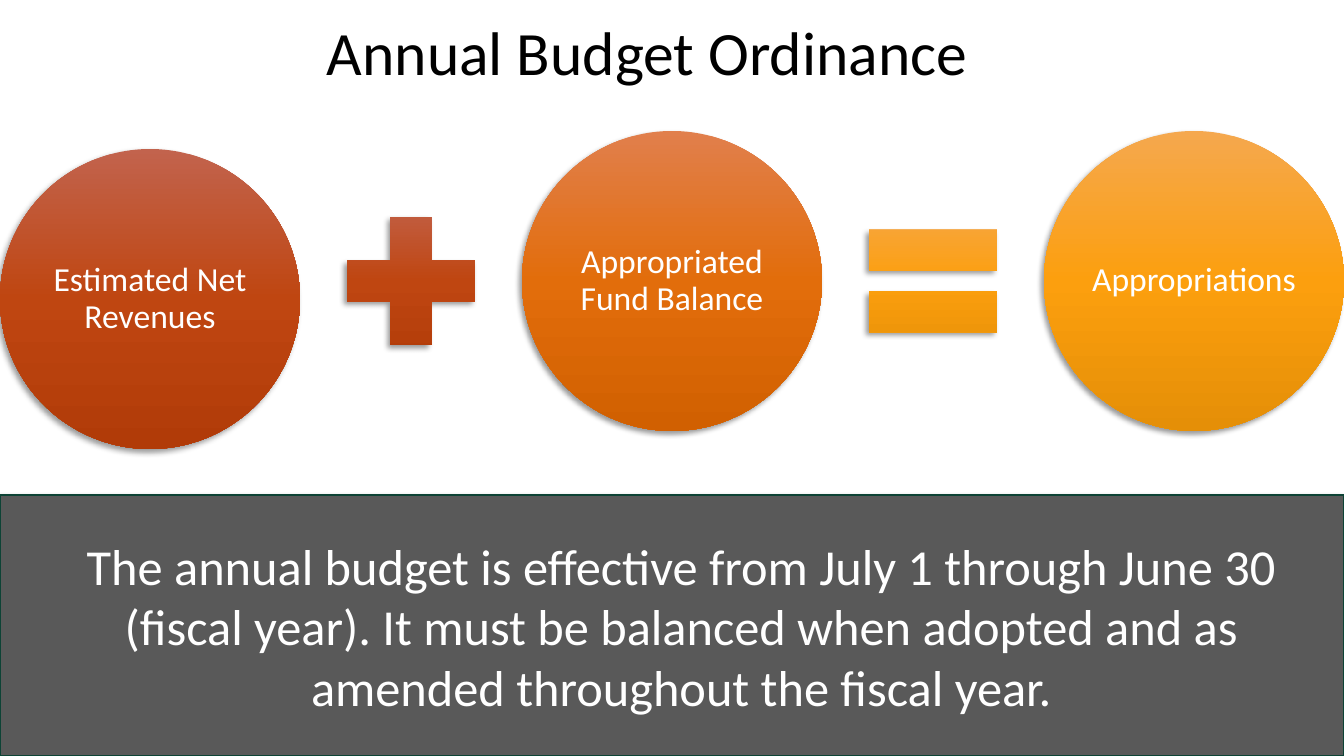
from copy import deepcopy
from dataclasses import dataclass

from pptx import Presentation
from pptx.dml.color import RGBColor
from pptx.enum.shapes import MSO_SHAPE
from pptx.enum.text import MSO_ANCHOR, PP_ALIGN
from pptx.oxml import parse_xml
from pptx.oxml.ns import nsdecls
from pptx.util import Emu, Pt


@dataclass(frozen=True)
class Theme:
    font: str = "Calibri"
    black: str = "000000"
    white: str = "FFFFFF"
    grey: str = "595959"
    green: str = "0D4335"
    rust: tuple = ("C2634D", "BF4611", "B13B08")
    orange: tuple = ("E17F4C", "E26D0B", "D16001")
    amber: tuple = ("F5A84E", "FC9F0E", "E58F07")
    head: int = 44
    body: int = 36
    label: int = 24


def px(n):
    return Emu(round(n * 914400 / 100.8))


def rgb(code):
    return RGBColor.from_string(code)


def write(shape, text, *, font, size, color, inset=None, space=None, indent=0):
    frame = shape.text_frame
    frame.word_wrap = True
    frame.vertical_anchor = MSO_ANCHOR.MIDDLE
    if inset is not None:
        frame.margin_left = frame.margin_right = px(inset)
        frame.margin_top = frame.margin_bottom = px(inset)
    para = frame.paragraphs[0]
    para.alignment = PP_ALIGN.CENTER
    para.line_spacing = space
    if indent:
        props = para._p.get_or_add_pPr()
        props.set("marL", str(px(indent)))
        props.set("indent", "0")
    run = para.add_run()
    run.text = text
    run.font.name = font
    run.font.size = Pt(size)
    run.font.color.rgb = rgb(color)


class Board:
    def __init__(self, slide, theme):
        self.slide = slide
        self.theme = theme

    def title(self, text, *box):
        shape = self.slide.shapes.add_textbox(*map(px, box))
        write(shape, text, font=self.theme.font, size=self.theme.head,
              color=self.theme.black, space=0.9)

    def shape(self, kind, *box):
        shape = self.slide.shapes.add_shape(kind, *map(px, box))
        shape.shadow.inherit = False
        shape.line.fill.background()
        shade = parse_xml(
            f'<a:outerShdw {nsdecls("a")} blurRad="{Pt(4)}" dist="{Pt(3)}" '
            'dir="8100000" rotWithShape="0"><a:srgbClr val="000000">'
            '<a:alpha val="40000"/></a:srgbClr></a:outerShdw>')
        shape.element.xpath("./p:spPr/a:effectLst")[0].append(shade)
        return shape

    def glow(self, kind, tones, *box):
        shape = self.shape(kind, *box)
        shape.fill.gradient()
        shape.fill.gradient_angle = 270
        first = shape.element.xpath("./p:spPr/a:gradFill/a:gsLst/a:gs")[0]
        first.addnext(deepcopy(first))
        for i, (stop, tone) in enumerate(zip(shape.fill.gradient_stops, tones)):
            stop.position = i / 2
            stop.color.rgb = rgb(tone)
        return shape

    def circle(self, text, tones, left, top):
        shape = self.glow(MSO_SHAPE.OVAL, tones, left, top, 300, 300)
        write(shape, text, font=self.theme.font, size=self.theme.label,
              color=self.theme.white, inset=3, space=0.9)

    def band(self, text, *box):
        shape = self.shape(MSO_SHAPE.RECTANGLE, *box)
        shape.fill.solid()
        shape.fill.fore_color.rgb = rgb(self.theme.grey)
        shape.line.color.rgb = rgb(self.theme.green)
        shape.line.width = Pt(1)
        write(shape, text, font=self.theme.font, size=self.theme.body,
              color=self.theme.white, indent=19)


def main():
    deck = Presentation()
    deck.slide_width, deck.slide_height = px(1344), px(756)
    theme = Theme()
    board = Board(deck.slides.add_slide(deck.slide_layouts[6]), theme)

    board.title("Annual Budget Ordinance", 93, -17, 1109, 146)

    step = 522
    terms = [
        ("Estimated Net Revenues", theme.rust, 149),
        ("Appropriated Fund Balance", theme.orange, 131),
        ("Appropriations", theme.amber, 131),
    ]
    for i, (text, tones, top) in enumerate(terms):
        board.circle(text, tones, i * step, top)

    signs = [(MSO_SHAPE.MATH_PLUS, theme.rust), (MSO_SHAPE.MATH_EQUAL, theme.amber)]
    for i, (kind, tones) in enumerate(signs):
        board.glow(kind, tones, i * step + 324, 194, 174, 174)

    board.band(
        "The annual budget is effective from July 1 through June 30 (fiscal year). "
        "It must be balanced when adopted and as amended throughout the fiscal year.",
        0, 495, 1344, 261)

    deck.save("out.pptx")


if __name__ == "__main__":
    main()
